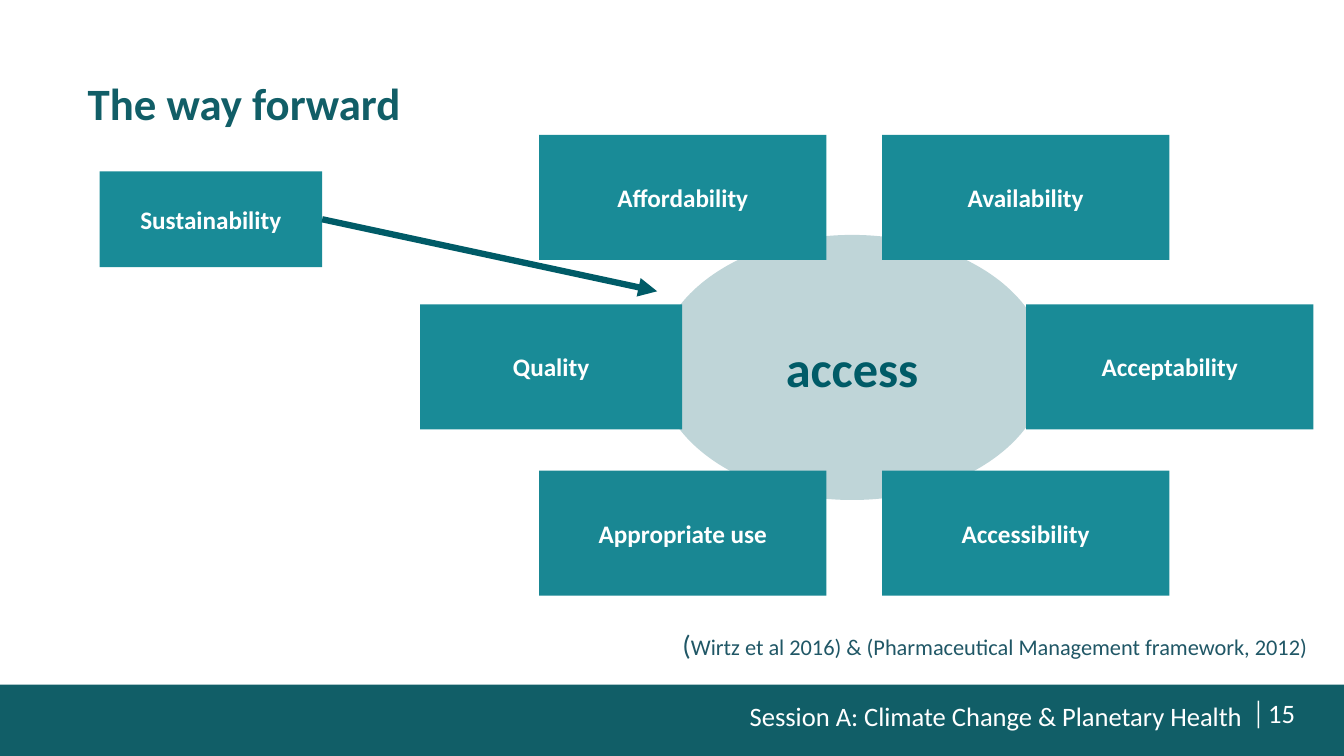
from dataclasses import dataclass

from lxml import etree
from pptx import Presentation
from pptx.dml.color import RGBColor
from pptx.enum.shapes import MSO_CONNECTOR, MSO_SHAPE
from pptx.enum.text import MSO_ANCHOR, PP_ALIGN
from pptx.oxml.ns import qn
from pptx.shapes.autoshape import Shape
from pptx.slide import Slide
from pptx.text.text import TextFrame
from pptx.util import Cm, Pt

RECT, OVAL = MSO_SHAPE.RECTANGLE, MSO_SHAPE.OVAL
STRAIGHT = MSO_CONNECTOR.STRAIGHT
TOP, MIDDLE = MSO_ANCHOR.TOP, MSO_ANCHOR.MIDDLE
LEFT, CENTER, RIGHT = PP_ALIGN.LEFT, PP_ALIGN.CENTER, PP_ALIGN.RIGHT
RIGHT_SIDE = 3

FONT = "Calibri"
COLORS = {
    "band": "115E67",
    "box": "198B97",
    "box_dark": "198793",
    "deep": "005B67",
    "citation": "205766",
    "white": "FFFFFF",
}
ROWS = (3.4, 7.67, 11.86)
COLS = (13.59, 22.23)
BOX_W, BOX_H = 7.24, 3.15


@dataclass
class Block:
    text: str
    left: float
    top: float
    width: float = BOX_W
    height: float = BOX_H
    fill: str = "box"
    color: str = "white"
    size: int = 18
    shape: MSO_SHAPE = RECT


@dataclass
class Label:
    text: str
    left: float
    top: float
    width: float
    height: float
    size: int = 19
    color: str = "white"
    align: PP_ALIGN = LEFT


ACCESS = Block("access", 16.56, 5.92, 9.83, 6.68, "deep", "deep", 36, OVAL)
DIMENSIONS = (
    Block("Quality", 10.59, ROWS[1], 6.6),
    Block("Appropriate use", COLS[0], ROWS[2], fill="box_dark"),
    Block("Affordability", COLS[0], ROWS[0]),
    Block("Availability", COLS[1], ROWS[0]),
    Block("Acceptability", 25.86, ROWS[1]),
    Block("Accessibility", COLS[1], ROWS[2]),
)
SUSTAINABILITY = Block("Sustainability", 2.51, 4.32, 5.61, 2.41)
BAND = Block("", 0, 17.25, 33.87, 1.8, "band")
NUMBER = Label("15", 31.55, 17.65, 2.2, 0.79)
SESSION = Label("Session A: Climate Change & Planetary Health",
                9.3, 17.65, 22, 0.79, align=RIGHT)
CITATION = Label("(", 17.2, 15.8, 16.5, 1.07, 20, "citation")


def rgb(name: str) -> RGBColor:
    return RGBColor.from_string(COLORS[name])


def style(font, size: int, color: str, bold: bool = False) -> None:
    font.name, font.size, font.bold = FONT, Pt(size), bold
    font.color.rgb = rgb(color)


def clear_insets(tf: TextFrame) -> None:
    tf.margin_left = tf.margin_right = tf.margin_top = tf.margin_bottom = 0
    tf.vertical_anchor = TOP
    tf.word_wrap = True


def add_block(s: Slide, block: Block) -> Shape:
    sp = s.shapes.add_shape(block.shape, Cm(block.left), Cm(block.top),
                            Cm(block.width), Cm(block.height))
    sp.shadow.inherit = False
    sp.fill.solid()
    sp.fill.fore_color.rgb = rgb(block.fill)
    sp.line.fill.background()
    if block.text:
        tf = sp.text_frame
        tf.text = block.text
        tf.vertical_anchor = MIDDLE
        p = tf.paragraphs[0]
        p.alignment = CENTER
        style(p.runs[0].font, block.size, block.color, True)
    return sp


def set_alpha(sp: Shape, percent: int) -> None:
    color = sp.fill._xPr.find(qn("a:solidFill"))[0]
    etree.SubElement(color, qn("a:alpha"), val=str(percent * 1000))


def add_label(s: Slide, label: Label) -> TextFrame:
    sp = s.shapes.add_textbox(Cm(label.left), Cm(label.top),
                              Cm(label.width), Cm(label.height))
    tf = sp.text_frame
    clear_insets(tf)
    tf.text = label.text
    p = tf.paragraphs[0]
    p.alignment = label.align
    style(p.runs[0].font, label.size, label.color)
    return tf


def add_bar_bullet(tf: TextFrame) -> None:
    """Put a white vertical bar before the text as its bullet."""
    p = tf.paragraphs[0]
    p.line_spacing, p.space_after = 0.9, Pt(6)
    pPr = p._p.get_or_add_pPr()
    indent = Cm(0.41)
    pPr.set("marL", str(indent))
    pPr.set("indent", str(-indent))
    bullet_color = etree.SubElement(pPr, qn("a:buClr"))
    etree.SubElement(bullet_color, qn("a:srgbClr"), val=COLORS["white"])
    etree.SubElement(pPr, qn("a:buFont"), typeface=FONT)
    etree.SubElement(pPr, qn("a:buChar"), char="│")


def add_arrow(s: Slide, source: Shape, x: float, y: float) -> None:
    """Draw an arrow from the source's right side to a point in cm."""
    arrow = s.shapes.add_connector(STRAIGHT, 0, 0, Cm(x), Cm(y))
    arrow.begin_connect(source, RIGHT_SIDE)
    arrow.line.color.rgb = rgb("deep")
    arrow.line.width = Pt(4.5)
    etree.SubElement(arrow.line._get_or_add_ln(), qn("a:tailEnd"), type="triangle")
    etree.SubElement(arrow._element.spPr, qn("a:effectLst"))


def add_title(s: Slide, text: str) -> None:
    title = s.shapes.title
    title.left, title.top = Cm(2.21), Cm(2.06)
    title.width, title.height = Cm(29.49), Cm(2.39)
    tf = title.text_frame
    clear_insets(tf)
    tf.text = text
    p = tf.paragraphs[0]
    p.alignment, p.line_spacing = LEFT, 0.9
    style(p.runs[0].font, 32, "band", True)


def main() -> None:
    prs = Presentation()
    prs.slide_width, prs.slide_height = Cm(33.87), Cm(19.05)
    s = prs.slides.add_slide(prs.slide_layouts[5])

    add_block(s, BAND)
    add_title(s, "The way forward")
    add_bar_bullet(add_label(s, NUMBER))
    set_alpha(add_block(s, ACCESS), 25)
    for dimension in DIMENSIONS:
        add_block(s, dimension)
    add_arrow(s, add_block(s, SUSTAINABILITY), 16.56, 7.34)

    r = add_label(s, CITATION).paragraphs[0].add_run()
    r.text = "Wirtz et al 2016) & (Pharmaceutical Management framework, 2012)"
    style(r.font, 16, "citation")
    add_label(s, SESSION)
    prs.save("out.pptx")


if __name__ == "__main__":
    main()
